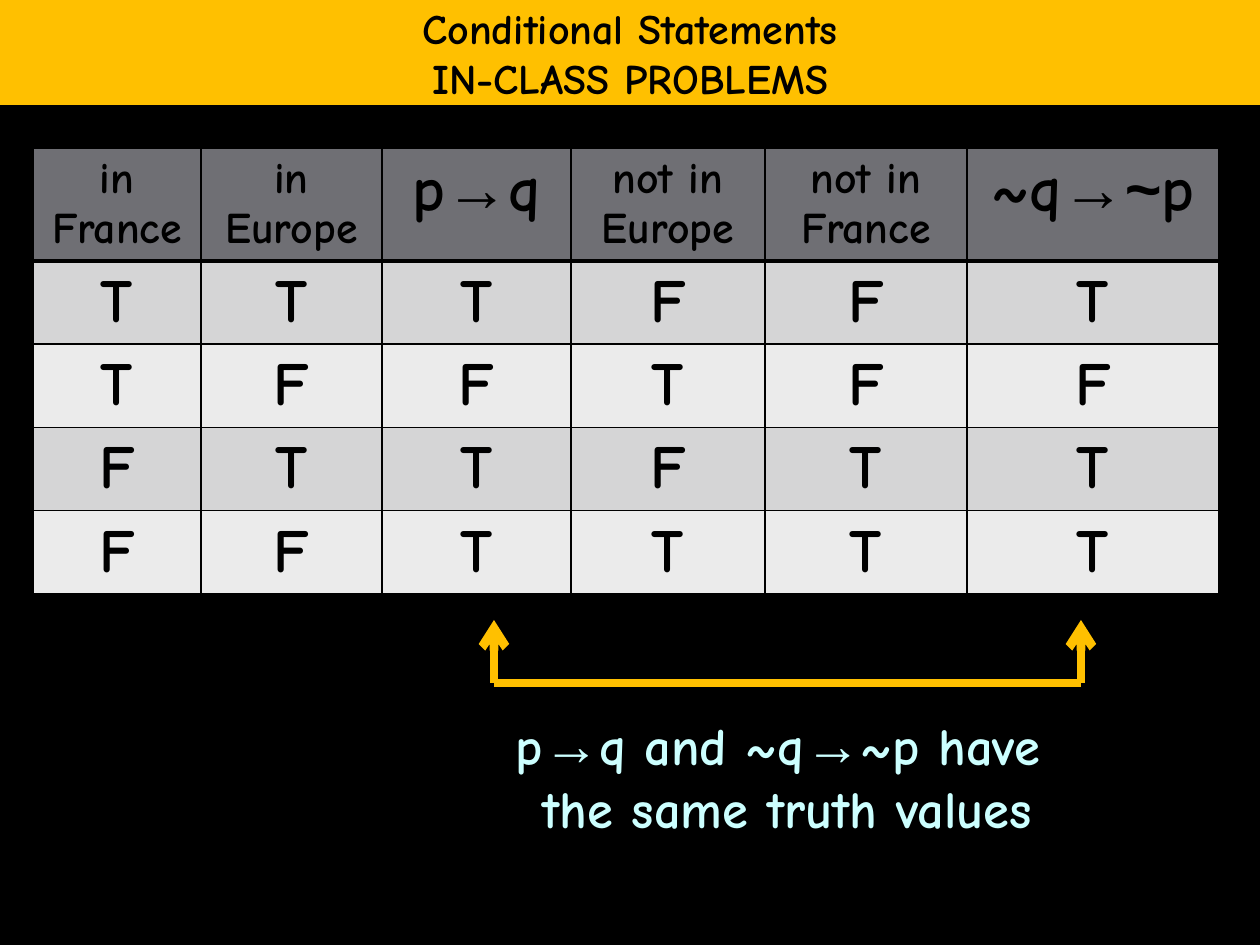
"""Build the truth table slide on conditional statements."""
from lxml.etree import SubElement
from pptx import Presentation
from pptx.dml.color import RGBColor
from pptx.enum.shapes import MSO_CONNECTOR
from pptx.enum.text import MSO_ANCHOR, MSO_AUTO_SIZE, PP_ALIGN
from pptx.oxml.ns import qn
from pptx.util import Inches, Pt

BLACK = RGBColor(0x00, 0x00, 0x00)
GOLD = RGBColor(0xFF, 0xC0, 0x00)
AQUA = RGBColor(0xCC, 0xFF, 0xFF)
GREY = RGBColor(0x6F, 0x6F, 0x74)
MID = RGBColor(0xD5, 0xD5, 0xD6)
PALE = RGBColor(0xEB, 0xEB, 0xEB)

HEAD = [
    (25, ["in France"]),
    (25, ["in Europe"]),
    (36, ["p", "→", "q"]),
    (25, ["not in Europe"]),
    (25, ["not in France"]),
    (36, ["~q", "→~", "p"]),
]
ROWS = ["TTTFFT", "TFFTFF", "FTTFTT", "FFTTTT"]
COLS = [168, 181, 189, 194, 202, 252]


def px(*nums):
    return [round(num * Inches(1) / 126) for num in nums]


class Deck:
    font = "Comic Neue"
    sign = "Arial"

    def __init__(self):
        self.prs = Presentation()
        self.prs.slide_width, self.prs.slide_height = px(1260, 945)
        self.slide = self.prs.slides.add_slide(self.prs.slide_layouts[5])
        fill = self.slide.background.fill
        fill.solid()
        fill.fore_color.rgb = BLACK

    def text(self, para, parts, size, color=BLACK, big=None):
        para.alignment = PP_ALIGN.CENTER
        for num, part in enumerate(parts):
            run = para.add_run()
            run.text = part
            odd = num % 2
            run.font.name = self.sign if odd else self.font
            run.font.size = Pt(big if odd and big else size)
            run.font.bold = True
            run.font.color.rgb = color

    def lines(self, frame, texts, size, color=BLACK, big=None):
        for num, parts in enumerate(texts):
            para = frame.add_paragraph() if num else frame.paragraphs[0]
            self.text(para, parts, size, color, big)

    def title(self, box, texts):
        shape = self.slide.shapes.title
        shape.left, shape.top, shape.width, shape.height = px(*box)
        shape.fill.solid()
        shape.fill.fore_color.rgb = GOLD
        frame = shape.text_frame
        frame.auto_size = MSO_AUTO_SIZE.NONE
        frame.word_wrap = False
        frame.vertical_anchor = MSO_ANCHOR.MIDDLE
        self.lines(frame, texts, 24)

    def note(self, box, texts):
        frame = self.slide.shapes.add_textbox(*px(*box)).text_frame
        frame.word_wrap = True
        self.lines(frame, texts, 30, AQUA, 32)

    def cell(self, cell, parts, size, color, top=1, low=1):
        self.text(cell.text_frame.paragraphs[0], parts, size)
        props = cell._tc.get_or_add_tcPr()
        for side, wide in zip("LRTB", (1, 1, top, low)):
            edge = SubElement(props, qn(f"a:ln{side}"), w=str(Pt(wide)))
            fill = SubElement(edge, qn("a:solidFill"))
            SubElement(fill, qn("a:srgbClr"), val=str(BLACK))
        cell.fill.solid()
        cell.fill.fore_color.rgb = color

    def table(self, left, top, cols, head, rows):
        high = [112] + [83] * len(rows)
        box = px(left, top, sum(cols), sum(high))
        grid = self.slide.shapes.add_table(len(high), len(cols), *box).table
        for col, wide in zip(grid.columns, px(*cols)):
            col.width = wide
        for row, tall in zip(grid.rows, px(*high)):
            row.height = tall
        for c, (size, parts) in enumerate(head):
            self.cell(grid.cell(0, c), parts, size, GREY, low=3)
        for r, marks in enumerate(rows, 1):
            for c, mark in enumerate(marks):
                color = MID if r % 2 else PALE
                top = 3 if r == 1 else 1
                self.cell(grid.cell(r, c), [mark], 35, color, top)

    def line(self, group, ends, tip=False):
        line = group.shapes.add_connector(MSO_CONNECTOR.STRAIGHT, *px(*ends))
        line.line.color.rgb = GOLD
        line.line.width = Pt(5)
        if tip:
            SubElement(line.line._get_or_add_ln(), qn("a:tailEnd"), type="arrow")
        SubElement(line._element.spPr, qn("a:effectLst"))

    def link(self, left, right, top, base):
        group = self.slide.shapes.add_group_shape()
        self.line(group, (left, base, right, base))
        for x in (left, right):
            self.line(group, (x, base, x, top), True)


def main():
    deck = Deck()
    deck.title((0, 0, 1260, 105), [["Conditional Statements"], ["IN-CLASS PROBLEMS"]])
    deck.table(33, 148, COLS, HEAD, ROWS)
    deck.note((189, 703, 1197, 158), [
        ["p", "→", "q and ~q", "→", "~p have "],
        ["the same truth values"],
    ])
    deck.link(494, 1081, 620, 683)
    deck.prs.save("out.pptx")


if __name__ == "__main__":
    main()
